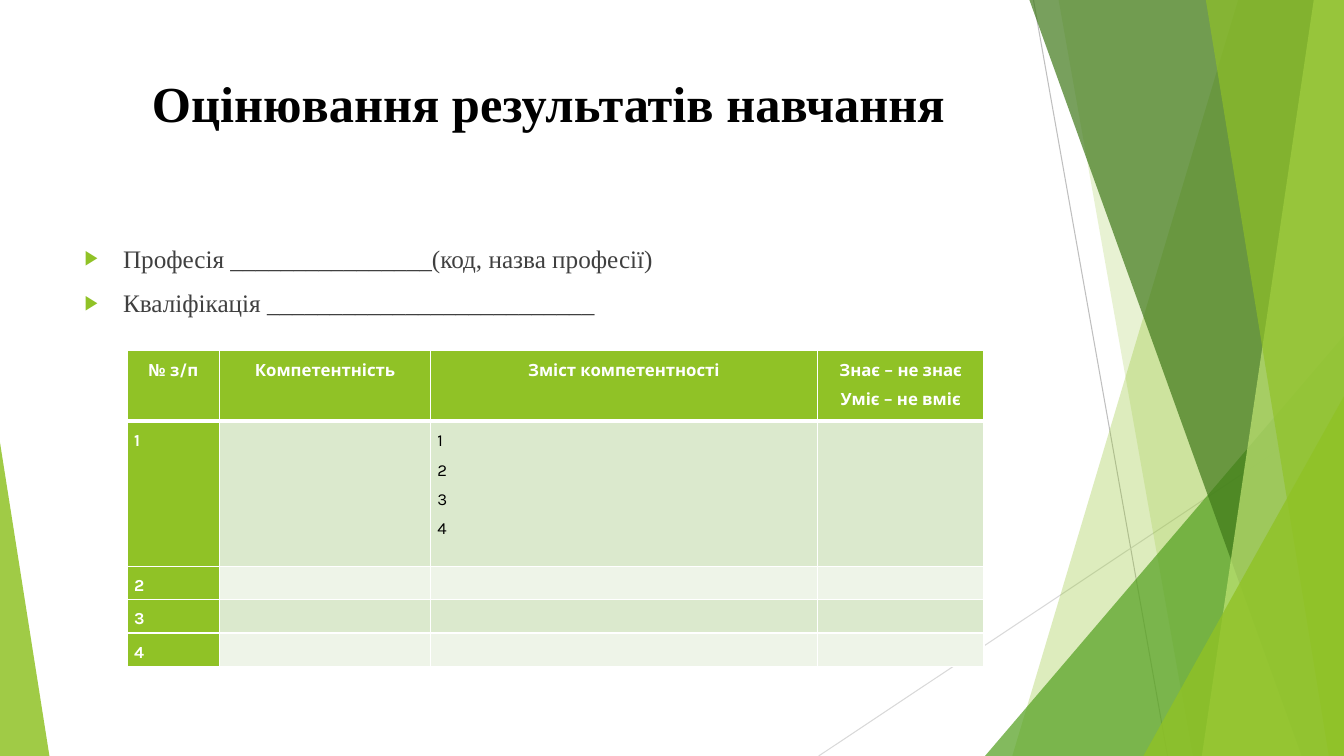
from lxml import etree
from pptx import Presentation, util as u
from pptx.dml.color import RGBColor
from pptx.enum import shapes, text
from pptx.oxml.ns import qn

WIDTH, HEIGHT = u.Inches(13.33), u.Inches(7.5)
LIME = RGBColor(0x90, 0xC2, 0x26)
GREEN = RGBColor(0x54, 0xA0, 0x21)
DARK_GREEN = RGBColor(0x3F, 0x78, 0x19)
PALE_LIME = RGBColor(0xC0, 0xE4, 0x74)
ROW_TINTS = RGBColor(0xDB, 0xE9, 0xCD), RGBColor(0xEE, 0xF4, 0xE8)
GREY, LIGHT_GREY = RGBColor(0xBF, 0xBF, 0xBF), RGBColor(0xD9, 0xD9, 0xD9)
WHITE, BLACK = RGBColor(0xFF, 0xFF, 0xFF), RGBColor(0, 0, 0)
TEXT_GREY = RGBColor(0x40, 0x40, 0x40)
SERIF, SANS = "Times New Roman", "Karla"
ALIGN = text.PP_ALIGN

# Boxes are left, top, width, height in inches
TITLE_BOX = 0.74, 0.67, 9.4, 1.44
BODY_BOX = 0.74, 2.36, 9.4, 4.24
TABLE_BOX = 1.26, 3.48, 8.5, 3.13

# Bands: left edge at the top and at the bottom; triangles: left, top, width, apex
FACETS = [
    ("band", (12.28, 10.04), LIME, 30),
    ("band", (10.5, 11.83), LIME, 20),
    ("triangle", (9.77, 3.33, 3.56, 1), GREEN, 72),
    ("band", (10.21, 12.91), DARK_GREEN, 70),
    ("band", (13.03, 11.92), PALE_LIME, 70),
    ("band", (11.96, 13.18), LIME, 65),
    ("triangle", (11.34, 3.93, 1.99, 1), LIME, 80),
    ("triangle", (0, 4.39, 0.49, 0), LIME, 85),
]
RULES = [((10.25, 0), (11.58, 7.5), GREY), ((13.33, 4.03), (8.12, 7.5), LIGHT_GREY)]

BODY_LINES = [
    "Професія ________________(код, назва професії)",
    "Кваліфікація __________________________",
]
COLUMN_WIDTHS = 0.92, 2.09, 3.84, 1.65
ROW_HEIGHTS = 0.7, 1.44, 0.33, 0.33, 0.33
TABLE_ROWS = [
    ["№ з/п", "Компетентність", "Зміст компетентності", "Знає – не знає\nУміє – не вміє"],
    ["1", "", "1\n2\n3\n4", ""],
    ["2", "", "", ""],
    ["3", "", "", ""],
    ["4", "", "", ""],
]


def apply_format(target, values):
    for name, value in values.items():
        setattr(target, name, value)


def place(shape, box):
    names = "left", "top", "width", "height"
    apply_format(shape, dict(zip(names, map(u.Inches, box))))


def format_font(font, color, **values):
    apply_format(font, values)
    font.color.rgb = color


def add_child(parent, tag, **attributes):
    return etree.SubElement(parent, qn(tag), attributes)


def add_rule(slide, start, end, color):
    ends = map(u.Inches, start + end)
    line = slide.shapes.add_connector(shapes.MSO_CONNECTOR.STRAIGHT, *ends)
    line.line.color.rgb = color
    line.line.width = u.Pt(0.75)
    add_child(line.element.spPr, "a:effectLst")


def add_band(slide, top_x, bottom_x):
    """Draw a full-height band reaching from a slanted edge to the right side."""
    builder = slide.shapes.build_freeform(u.Inches(top_x), 0)
    builder.add_line_segments(
        [(WIDTH, 0), (WIDTH, HEIGHT), (u.Inches(bottom_x), HEIGHT)], close=True)
    return builder.convert_to_shape()


def add_triangle(slide, left, top, width, apex):
    """Draw a triangle standing on the bottom edge of the slide."""
    box = u.Inches(left), u.Inches(top), u.Inches(width), HEIGHT - u.Inches(top)
    triangle = slide.shapes.add_shape(shapes.MSO_SHAPE.ISOSCELES_TRIANGLE, *box)
    triangle.adjustments[0] = apex
    return triangle


def add_backdrop(slide):
    for rule in RULES:
        add_rule(slide, *rule)
    builders = {"band": add_band, "triangle": add_triangle}
    for kind, geometry, color, opacity in FACETS:
        facet = builders[kind](slide, *geometry)
        facet.shadow.inherit = False
        facet.line.fill.background()
        facet.fill.solid()
        facet.fill.fore_color.rgb = color
        for node in facet.element.spPr.iter(qn("a:srgbClr")):
            add_child(node, "a:alpha", val=str(opacity * 1000))


def fill_title(title, box):
    place(title, box)
    title.text_frame.text = "Оцінювання результатів навчання"
    title.text_frame.vertical_anchor = text.MSO_ANCHOR.TOP
    paragraph = title.text_frame.paragraphs[0]
    paragraph.alignment = ALIGN.CENTER
    format_font(paragraph.runs[0].font, BLACK, name=SERIF, size=u.Pt(36), bold=True)


def add_bullet(paragraph):
    properties = paragraph._p.get_or_add_pPr()
    indent = u.Inches(0.38)
    properties.set("marL", str(indent))
    properties.set("indent", str(-indent))
    color = add_child(properties, "a:buClr")
    add_child(color, "a:srgbClr", val=str(LIME))
    add_child(properties, "a:buSzPct", val="80000")
    add_child(properties, "a:buChar", char="▶")


def fill_body(body, box):
    place(body, box)
    body.text_frame.text = "\n".join(BODY_LINES)
    for paragraph in body.text_frame.paragraphs:
        paragraph.space_before = u.Pt(10)
        add_bullet(paragraph)
        format_font(paragraph.runs[0].font, TEXT_GREY, name=SERIF, size=u.Pt(18))


def add_border(cell, side, points):
    line = add_child(cell._tc.get_or_add_tcPr(), f"a:ln{side}", w=str(u.Pt(points)))
    add_child(add_child(line, "a:solidFill"), "a:srgbClr", val=str(WHITE))


def fill_cell(cell, content, row, column):
    header, accent = row == 0, row == 0 or column == 0
    margin = u.Inches(0.07)
    apply_format(cell, dict(margin_left=margin, margin_right=margin,
                            margin_top=0, margin_bottom=0, text=content))
    widths = {"L": 1, "R": 1, "T": 3 if row == 1 else 1, "B": 3 if header else 1}
    for side, points in widths.items():
        add_border(cell, side, points)
    cell.fill.solid()
    cell.fill.fore_color.rgb = LIME if accent else ROW_TINTS[(row - 1) % 2]
    if not content:
        return
    for paragraph in cell.text_frame.paragraphs:
        paragraph.alignment = ALIGN.CENTER if header else ALIGN.JUSTIFY
        paragraph.line_spacing = 1.5
        format_font(paragraph.runs[0].font, WHITE if accent else BLACK,
                    name=SANS, size=u.Pt(12), bold=accent)


def add_competence_table(slide, box):
    size = len(ROW_HEIGHTS), len(COLUMN_WIDTHS)
    table = slide.shapes.add_table(*size, *map(u.Inches, box)).table
    for column, width in zip(table.columns, COLUMN_WIDTHS):
        column.width = u.Inches(width)
    for row, height in zip(table.rows, ROW_HEIGHTS):
        row.height = u.Inches(height)
    for row, contents in enumerate(TABLE_ROWS):
        for column, content in enumerate(contents):
            fill_cell(table.cell(row, column), content, row, column)


def build_assessment_slide(presentation):
    slide = presentation.slides.add_slide(presentation.slide_layouts[1])
    add_backdrop(slide)
    fill_title(slide.shapes.title, TITLE_BOX)
    fill_body(slide.placeholders[1], BODY_BOX)
    add_competence_table(slide, TABLE_BOX)


def main():
    presentation = Presentation()
    apply_format(presentation, dict(slide_width=WIDTH, slide_height=HEIGHT))
    build_assessment_slide(presentation)
    presentation.save("out.pptx")


if __name__ == "__main__":
    main()
